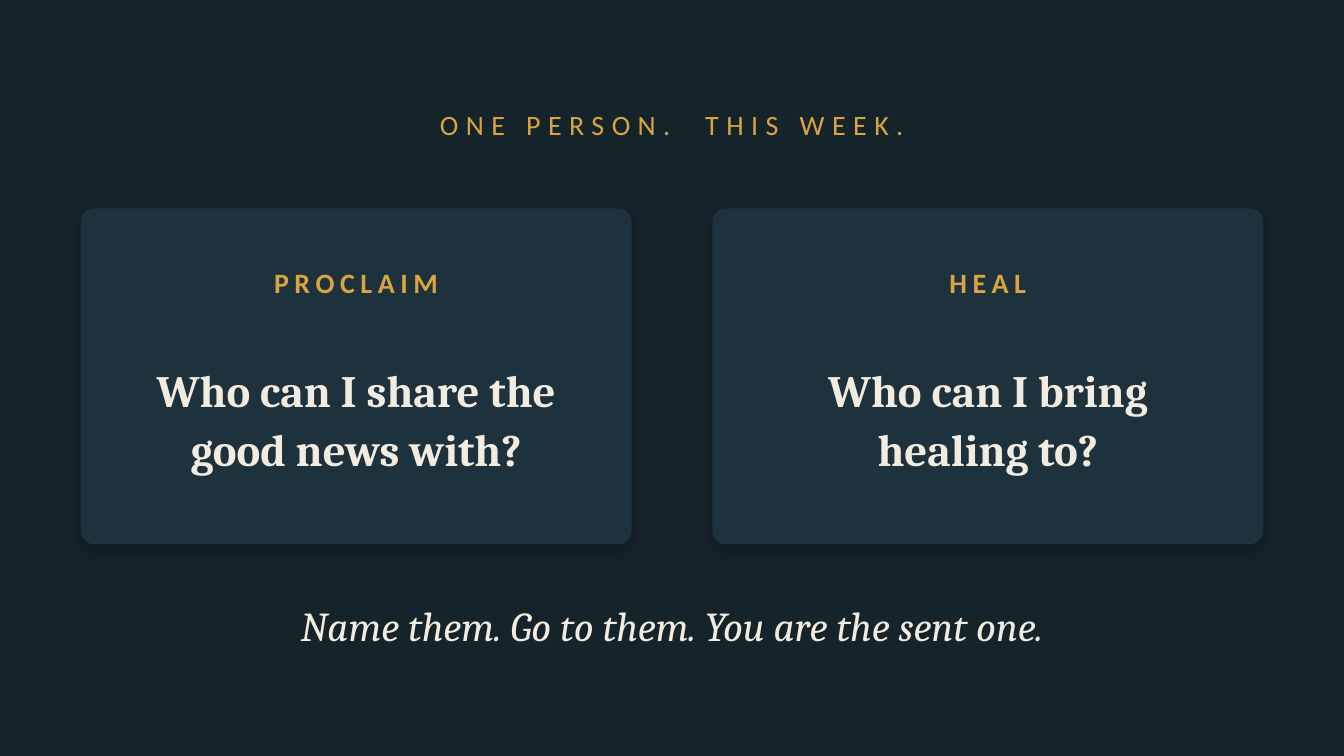
from dataclasses import dataclass

from lxml.etree import SubElement
from pptx import Presentation
from pptx.dml.color import RGBColor
from pptx.enum.shapes import MSO_SHAPE
from pptx.enum.text import MSO_ANCHOR, MSO_AUTO_SIZE, PP_ALIGN
from pptx.oxml.ns import qn
from pptx.shapes.autoshape import Shape
from pptx.slide import Slide
from pptx.util import Pt

BACKGROUND = RGBColor(0x15, 0x23, 0x2B)
CARD_FILL = RGBColor(0x1E, 0x32, 0x3D)
GOLD = RGBColor(0xD9, 0xA4, 0x41)
CREAM = RGBColor(0xF2, 0xEC, 0xE0)
SANS = "Calibri"
SERIF = "Cambria"

SLIDE_WIDTH = 720
SLIDE_HEIGHT = 405
CARD_MARGIN = 43.2
CARD_TOP = 111.6
CARD_WIDTH = 295.2
CARD_HEIGHT = 180
CARD_STEP = SLIDE_WIDTH - 2 * CARD_MARGIN - CARD_WIDTH
QUESTION_INSET = 18


@dataclass(frozen=True)
class Box:
    left: float
    top: float
    width: float
    height: float


@dataclass(frozen=True)
class Card:
    label: str
    question: str


CARDS = (
    Card("PROCLAIM", "Who can I share the good news with?"),
    Card("HEAL", "Who can I bring healing to?"),
)


def place(shape: Shape, box: Box) -> None:
    shape.left, shape.top = Pt(box.left), Pt(box.top)
    shape.width, shape.height = Pt(box.width), Pt(box.height)


def write_text(
    shape: Shape,
    text: str,
    *,
    font_name: str,
    size: float,
    color: RGBColor,
    bold: bool = False,
    italic: bool = False,
    letter_spacing: float = 0,
    line_spacing: float = 1.0,
) -> None:
    frame = shape.text_frame
    frame.word_wrap = True
    frame.auto_size = MSO_AUTO_SIZE.NONE
    frame.vertical_anchor = MSO_ANCHOR.MIDDLE
    paragraph = frame.paragraphs[0]
    paragraph.alignment = PP_ALIGN.CENTER
    paragraph.line_spacing = line_spacing
    run = paragraph.add_run()
    run.text = text
    font = run.font
    font.name = font_name
    font.size = Pt(size)
    font.bold = bold
    font.italic = italic
    font.color.rgb = color
    if letter_spacing:
        run._r.get_or_add_rPr().set("spc", str(round(letter_spacing * 100)))


def add_text(slide: Slide, box: Box, text: str, **text_format) -> None:
    shape = slide.shapes.add_textbox(0, 0, 0, 0)
    place(shape, box)
    write_text(shape, text, **text_format)


def add_soft_shadow(shape: Shape) -> None:
    shape.shadow.inherit = False
    effects = shape._element.spPr.find(qn("a:effectLst"))
    shadow = SubElement(
        effects,
        qn("a:outerShdw"),
        blurRad=str(Pt(9)),
        dist=str(Pt(3)),
        dir="5400000",
        algn="bl",
        rotWithShape="0",
    )
    color = SubElement(shadow, qn("a:srgbClr"), val="000000")
    SubElement(color, qn("a:alpha"), val="30000")


def add_card(slide: Slide, card: Card, left: float) -> None:
    panel = slide.shapes.add_shape(MSO_SHAPE.ROUNDED_RECTANGLE, 0, 0, 0, 0)
    place(panel, Box(left, CARD_TOP, CARD_WIDTH, CARD_HEIGHT))
    panel.adjustments[0] = 0.04
    panel.fill.solid()
    panel.fill.fore_color.rgb = CARD_FILL
    panel.line.fill.background()
    add_soft_shadow(panel)
    add_text(
        slide,
        Box(left, CARD_TOP + 21.6, CARD_WIDTH, 36),
        card.label,
        font_name=SANS,
        size=15,
        color=GOLD,
        bold=True,
        letter_spacing=3,
    )
    add_text(
        slide,
        Box(left + QUESTION_INSET, CARD_TOP + 61.2, CARD_WIDTH - 2 * QUESTION_INSET, 100.8),
        card.question,
        font_name=SERIF,
        size=24,
        color=CREAM,
        bold=True,
        line_spacing=1.1,
    )


def main() -> None:
    presentation = Presentation()
    presentation.slide_width = Pt(SLIDE_WIDTH)
    presentation.slide_height = Pt(SLIDE_HEIGHT)
    slide = presentation.slides.add_slide(presentation.slide_layouts[5])
    slide.background.fill.solid()
    slide.background.fill.fore_color.rgb = BACKGROUND

    title = slide.shapes.title
    place(title, Box(36, 50.4, 648, 32.4))
    write_text(
        title,
        "ONE PERSON.  THIS WEEK.",
        font_name=SANS,
        size=15,
        color=GOLD,
        letter_spacing=4,
    )
    for index, card in enumerate(CARDS):
        add_card(slide, card, CARD_MARGIN + index * CARD_STEP)
    add_text(
        slide,
        Box(57.6, 313.2, 604.8, 43.2),
        "Name them. Go to them. You are the sent one.",
        font_name=SERIF,
        size=22,
        color=CREAM,
        italic=True,
    )
    presentation.save("out.pptx")


if __name__ == "__main__":
    main()
